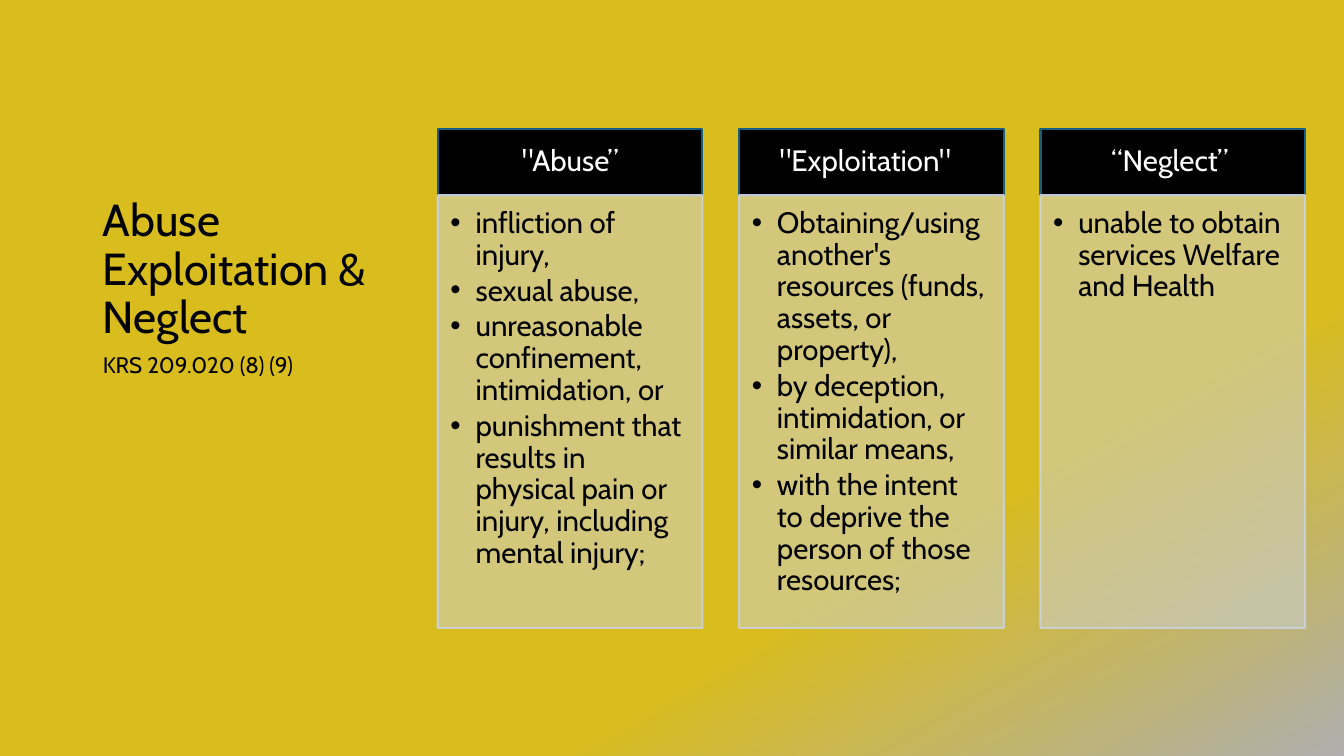
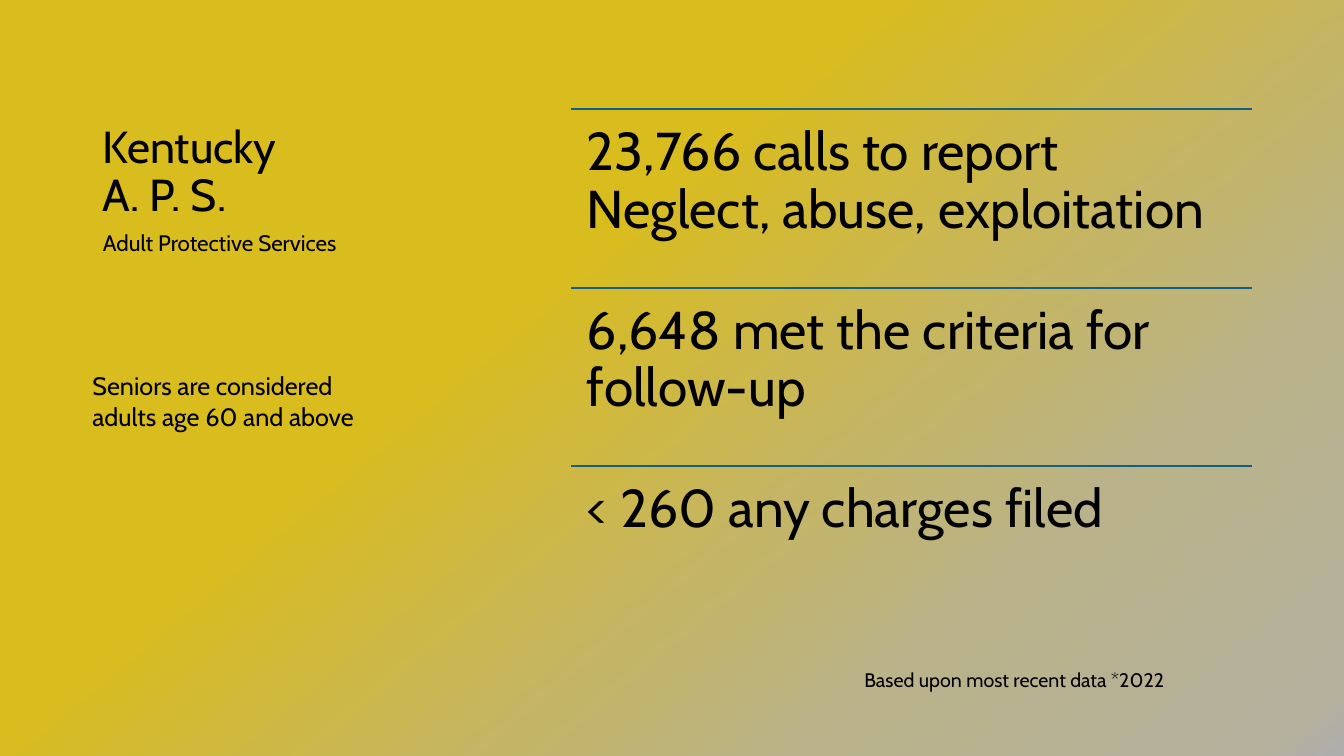
import pptx
import pptx.dml.color
import pptx.enum.shapes
import pptx.enum.text
import pptx.oxml
import pptx.oxml.ns
import pptx.util
from lxml import etree

RGB = pptx.dml.color.RGBColor
ANCHOR = pptx.enum.text.MSO_ANCHOR
ALIGN = pptx.enum.text.PP_ALIGN
qn = pptx.oxml.ns.qn

# Shared style: 96 px to the inch
PX = 9525
WIDTH, HEIGHT = 1280, 720
FONT = "Cabin"
BLACK = RGB(0x00, 0x00, 0x00)
WHITE = RGB(0xFF, 0xFF, 0xFF)
TEAL = RGB(0x15, 0x60, 0x82)
MIST = RGB(0xCC, 0xD2, 0xD8)
GOLD = RGB(0xD9, 0xBC, 0x1E)
SAND = RGB(0xC4, 0xB5, 0x66)
KHAKI = RGB(0xB9, 0xB2, 0x8A)
STONE = RGB(0xB4, 0xB0, 0x9C)
GREY = RGB(0xAE, 0xAE, 0xAE)

RULE_WIDTH = 1.5
TEXT_LEFT, TEXT_WIDTH = 88, 413
INSETS = (10, 5, 10, 5)


def px(*lengths):
    return [pptx.util.Emu(length * PX) for length in lengths]


def new_page(deck, stops, angle):
    """Add a blank page with a gradient running clockwise at the angle."""
    page = deck.slides.add_slide(deck.slide_layouts[6])
    fill = page.background.fill
    fill.gradient()
    fill.gradient_angle = 360 - angle
    stop_list = page.background._cSld.find(".//" + qn("a:gsLst"))
    for old_stop in list(stop_list):
        stop_list.remove(old_stop)
    for percent, color in stops:
        stop = etree.SubElement(stop_list, qn("a:gs"), pos=str(percent * 1000))
        etree.SubElement(stop, qn("a:srgbClr"), val=str(color))
    return page


def set_alpha(color_format_parent, percent):
    color = color_format_parent.find(qn("a:solidFill")).find(qn("a:srgbClr"))
    etree.SubElement(color, qn("a:alpha"), val=str(percent * 1000))


def add_bullet(para, indent):
    properties = para._p.get_or_add_pPr()
    properties.set("marL", str(indent * PX))
    properties.set("indent", str(-indent * PX))
    etree.SubElement(properties, qn("a:buFont"), typeface="Arial")
    etree.SubElement(properties, qn("a:buChar"), char="•")


def write(shape, paragraphs, size, color=BLACK, anchor=ANCHOR.TOP, align=ALIGN.LEFT,
          insets=INSETS, spacing=0.9, before=0, after=0, bullet_indent=0):
    """Fill a shape with paragraphs, each a list of lines."""
    frame = shape.text_frame
    frame.word_wrap = True
    frame.vertical_anchor = anchor
    (frame.margin_left, frame.margin_top,
     frame.margin_right, frame.margin_bottom) = px(*insets)
    for number, lines in enumerate(paragraphs):
        para = frame.add_paragraph() if number else frame.paragraphs[0]
        para.alignment = align
        para.line_spacing = spacing
        para.space_before = pptx.util.Pt(before)
        para.space_after = pptx.util.Pt(after)
        if bullet_indent:
            add_bullet(para, bullet_indent)
        for line_number, line in enumerate(lines):
            if line_number:
                para.add_line_break()
            span = para.add_run()
            span.text = line
            span.font.name = FONT
            span.font.size = pptx.util.Pt(size)
            span.font.color.rgb = color


def add_text(page, box, paragraphs, size, **style):
    write(page.shapes.add_textbox(*px(*box)), paragraphs, size, **style)


def add_panel(page, box, fill, line):
    panel = page.shapes.add_shape(pptx.enum.shapes.MSO_SHAPE.RECTANGLE, *px(*box))
    panel.shadow.inherit = False
    panel.fill.solid()
    panel.fill.fore_color.rgb = fill
    panel.line.color.rgb = line
    panel.line.width = pptx.util.Pt(RULE_WIDTH)
    return panel


def add_rule(page, left, top, width):
    rule = page.shapes.add_connector(pptx.enum.shapes.MSO_CONNECTOR.STRAIGHT,
                                     *px(left, top, left + width, top))
    rule.line.color.rgb = TEAL
    rule.line.width = pptx.util.Pt(RULE_WIDTH)
    etree.SubElement(rule._element.spPr, qn("a:effectLst"))


def add_heading(page, top, title_lines, subtitle):
    """Title standing on its box's lower edge, with the subtitle below."""
    title_height = 168
    add_text(page, (TEXT_LEFT, top, TEXT_WIDTH, title_height), [title_lines], 32,
             anchor=ANCHOR.BOTTOM)
    add_text(page, (TEXT_LEFT, top + title_height, TEXT_WIDTH, 40), [[subtitle]], 16)


def add_column(page, box, term, shift, points):
    """Black header over a translucent list; shift moves the term leftwards."""
    left, top, width, height = box
    header_height = 63
    header = add_panel(page, (left, top, width, header_height), BLACK, TEAL)
    write(header, [[term]], 21, color=WHITE, anchor=ANCHOR.MIDDLE,
          align=ALIGN.CENTER, insets=(15, 9, 15 + 2 * shift, 9))
    body = add_panel(page, (left, top + header_height, width, height - header_height),
                     MIST, MIST)
    set_alpha(body._element.spPr, 50)
    set_alpha(body.line._ln, 90)
    write(body, [[point] for point in points], 21, insets=(12, 12, 15, 17),
          after=3, bullet_indent=24)


def add_definitions_page(deck):
    page = new_page(deck, [(0, GOLD), (70, GOLD), (100, GREY)], 60)
    add_heading(page, 164, ["Abuse", "Exploitation &", "Neglect"], "KRS 209.020 (8) (9)")
    columns = [
        ("\"Abuse”", 0, [
            "infliction of injury,",
            "sexual abuse,",
            "unreasonable confinement, intimidation, or",
            "punishment that results in physical pain or injury, including mental injury;",
        ]),
        ("\"Exploitation\"", 6, [
            "Obtaining/using another's resources (funds, assets, or property),",
            "by deception, intimidation, or similar means,",
            "with the intent to deprive the person of those resources;",
        ]),
        ("“Neglect”", 3, ["unable to obtain services Welfare and Health"]),
    ]
    left, top, width, height, gap = 417, 123, 252, 475, 35
    for number, column in enumerate(columns):
        add_column(page, (left + number * (width + gap), top, width, height), *column)


def add_figures_page(deck):
    stops = [(0, GOLD), (39, GOLD), (62, SAND), (76, KHAKI), (96, STONE), (100, GREY)]
    page = new_page(deck, stops, 50)
    add_heading(page, 48, ["Kentucky", "A. P. S."], "Adult Protective Services")

    # Ruled list of figures
    left, top, width, row_height = 544, 104, 648, 170
    figures = [
        "23,766 calls to report Neglect, abuse, exploitation",
        "6,648 met the criteria for follow-up",
        "< 260 any charges filed",
    ]
    for number, figure in enumerate(figures):
        row_top = top + number * row_height
        add_rule(page, left, row_top, width)
        add_text(page, (left, row_top, width, row_height), [[figure]], 38,
                 insets=(15, 15, 15, 15))

    # Side note and data footnote
    add_text(page, (78, 348, 296, 68),
             [["Seniors are considered adults age 60 and above"]], 18, spacing=1.0)
    add_text(page, (TEXT_LEFT, 631, 1031, 33),
             [["Based upon most recent data *2022"]], 14, align=ALIGN.RIGHT, spacing=1.0)


def main():
    deck = pptx.Presentation()
    deck.slide_width, deck.slide_height = px(WIDTH, HEIGHT)
    add_definitions_page(deck)
    add_figures_page(deck)
    deck.save("out.pptx")


if __name__ == "__main__":
    main()
